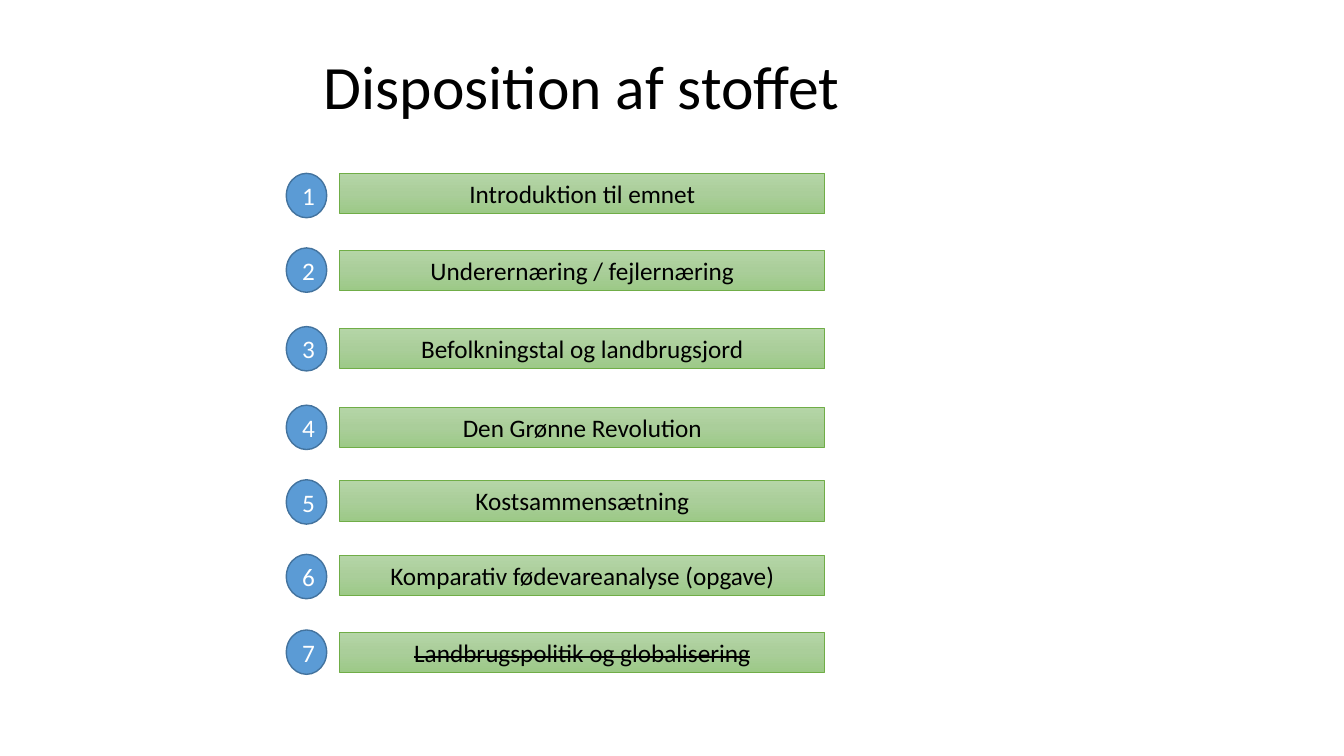
from copy import deepcopy
from dataclasses import dataclass

from pptx import Presentation, util as u
from pptx.dml.color import RGBColor
from pptx.enum import shapes, text


@dataclass(frozen=True)
class Theme:
    """Colours, font and type sizes of the slide."""
    font: str = "Calibri"
    ink: str = "000000"
    pale: str = "FFFFFF"
    badge: str = "5B9BD5"
    rim: str = "43739E"
    edge: str = "70AD47"
    fade: tuple = ("B5D5A7", "AACE9A", "9CC987")
    head: int = 44
    body: int = 18


def write(frame, words, font, size, color, anchor=text.MSO_ANCHOR.MIDDLE,
          spacing=None, strike=False):
    """Put one centred line of formatted text in a frame."""
    frame.word_wrap = True
    frame.vertical_anchor = anchor
    para = frame.paragraphs[0]
    para.alignment = text.PP_ALIGN.CENTER
    if spacing:
        para.line_spacing = spacing
    run = para.add_run()
    run.text = words
    run.font.name = font
    run.font.size = u.Pt(size)
    run.font.color.rgb = RGBColor.from_string(color)
    if strike:
        run.font._element.set("strike", "sngStrike")


class Deck:
    """Draws the elements of the current slide in one theme."""

    def __init__(self, slide, theme):
        self.slide = slide
        self.theme = theme

    def title(self, words, *box):
        """Add the slide title."""
        area = self.slide.shapes.add_textbox(*map(u.Inches, box))
        write(area.text_frame, words, self.theme.font, self.theme.head,
              self.theme.ink, spacing=0.9)

    def shape(self, kind, box, line, width):
        """Add an outlined preset shape without shadow."""
        item = self.slide.shapes.add_shape(kind, *map(u.Inches, box))
        item.shadow.inherit = False
        item.line.color.rgb = RGBColor.from_string(line)
        item.line.width = u.Pt(width)
        return item

    def bar(self, words, top, strike=False):
        """Add a green topic bar with a vertical fade."""
        look = self.theme
        item = self.shape(shapes.MSO_SHAPE.RECTANGLE, (3.37, top, 4.81, 0.4),
                          look.edge, 0.5)
        item.fill.gradient()
        item.fill.gradient_angle = 270
        first = item._element.spPr.xpath(".//a:gs")[0]
        first.addnext(deepcopy(first))
        for stop, color, place in zip(item.fill.gradient_stops, look.fade,
                                      (0, 0.5, 1)):
            stop.color.rgb = RGBColor.from_string(color)
            stop.position = place
        write(item.text_frame, words, look.font, look.body, look.ink,
              anchor=text.MSO_ANCHOR.TOP, strike=strike)
        item.text_frame.auto_size = text.MSO_AUTO_SIZE.SHAPE_TO_FIT_TEXT

    def badge(self, number, top):
        """Add a round blue number badge."""
        look = self.theme
        item = self.shape(shapes.MSO_SHAPE.OVAL, (2.84, top, 0.4, 0.44),
                          look.rim, 1)
        item.fill.solid()
        item.fill.fore_color.rgb = RGBColor.from_string(look.badge)
        write(item.text_frame, str(number), look.font, look.body, look.pale)


TOPICS = [
    ("Introduktion til emnet", 1.72, 1.72),
    ("Underernæring / fejlernæring", 2.48, 2.46),
    ("Befolkningstal og landbrugsjord", 3.26, 3.24),
    ("Den Grønne Revolution", 4.04, 4.02),
    ("Kostsammensætning", 4.77, 4.76),
    ("Komparativ fødevareanalyse (opgave)", 5.51, 5.5),
    ("Landbrugspolitik og globalisering", 6.27, 6.25),
]


def main():
    """Build and save the slide."""
    show = Presentation()
    show.slide_width = u.Inches(13.33)
    show.slide_height = u.Inches(7.5)
    deck = Deck(show.slides.add_slide(show.slide_layouts[6]), Theme())
    deck.title("Disposition af stoffet", 0.02, 0.16, 11.5, 1.45)
    for number, (topic, top, high) in enumerate(TOPICS, 1):
        deck.bar(topic, top, strike=number == len(TOPICS))
        deck.badge(number, high)
    show.save("out.pptx")


if __name__ == "__main__":
    main()
